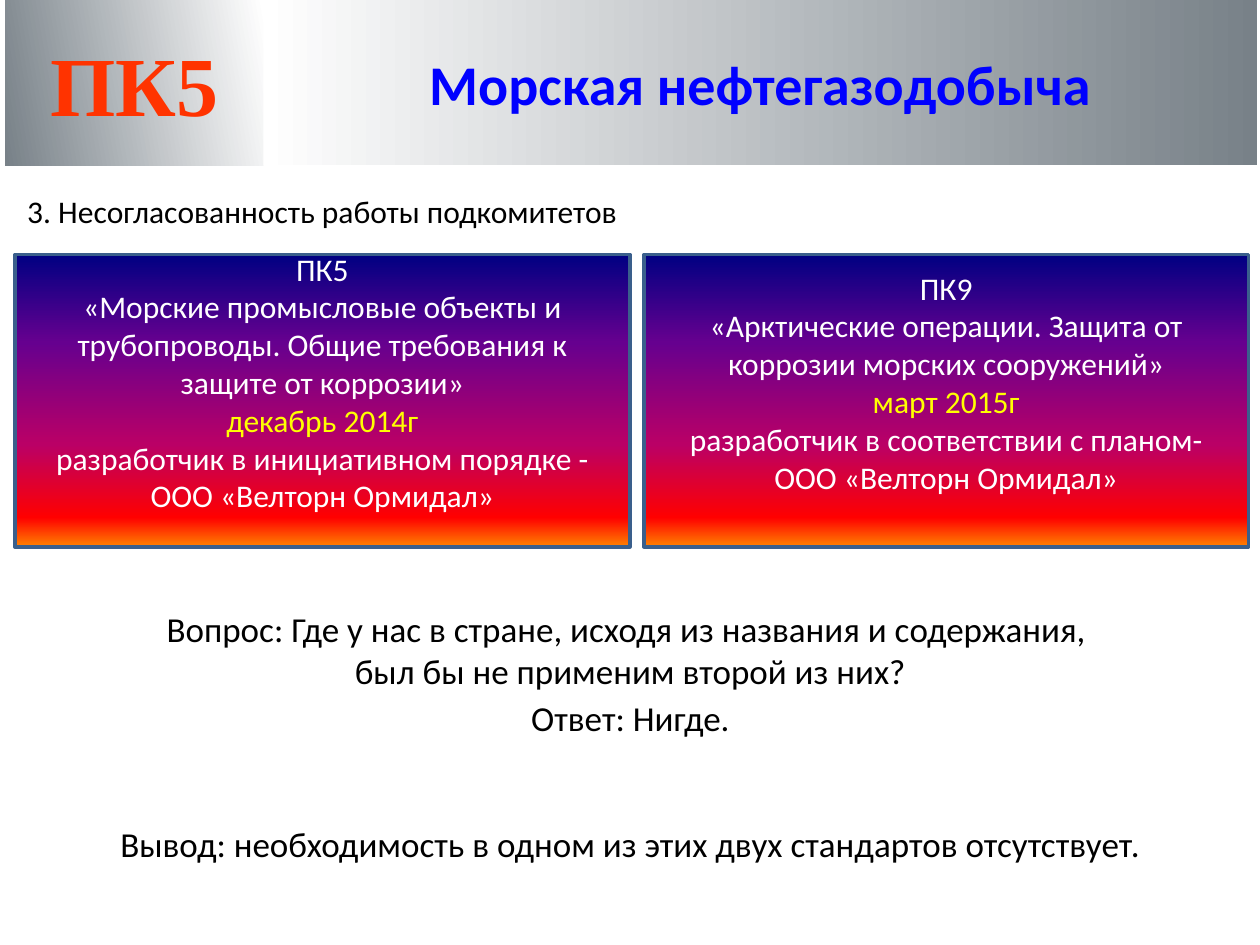
from dataclasses import dataclass

from lxml.etree import SubElement
from pptx import Presentation
from pptx.dml.color import RGBColor
from pptx.enum.shapes import MSO_SHAPE
from pptx.enum.text import MSO_ANCHOR, PP_ALIGN
from pptx.oxml.ns import qn
from pptx.util import Pt


@dataclass(frozen=True)
class Theme:
    body_font: str = "Calibri"
    badge_font: str = "Times New Roman"
    badge_size: int = 48
    title_size: int = 32
    card_size: int = 18
    remark_size: int = 20
    badge: str = "FF3300"
    title: str = "0000FF"
    ink: str = "000000"
    card_text: str = "FFFFFF"
    date: str = "FFFF00"
    card_line: str = "3A5F8C"
    steel: tuple = ((0, "FFFFFF"), (100, "788188"))
    sunset: tuple = ((0, "000082"), (30, "66008F"), (65, "BA0066"),
                     (90, "FF0000"), (100, "FF8200"))


THEME = Theme()
DEVELOPER = "ООО «Велторн Ормидал»"


def fill_gradient(shape, stops, angle):
    shape.fill.gradient()
    gradient = shape.fill._xPr.find(qn("a:gradFill"))
    for child in list(gradient):
        gradient.remove(child)
    stop_list = SubElement(gradient, qn("a:gsLst"))
    for percent, color in stops:
        stop = SubElement(stop_list, qn("a:gs"), pos=str(percent * 1000))
        SubElement(stop, qn("a:srgbClr"), val=color)
    SubElement(gradient, qn("a:lin"), ang=str(angle * 60000), scaled="0")


def write(frame, lines, size, color, font=THEME.body_font, bold=False,
          align=PP_ALIGN.CENTER):
    frame.text = "\n".join(lines)
    for paragraph in frame.paragraphs:
        paragraph.alignment = align
        for run in paragraph.runs:
            run.font.name = font
            run.font.size = Pt(size)
            run.font.bold = bold
            run.font.color.rgb = RGBColor.from_string(color)


def add_panel(shapes, preset, box, stops, angle):
    panel = shapes.add_shape(preset, *map(Pt, box))
    panel.shadow.inherit = False
    fill_gradient(panel, stops, angle)
    panel.line.fill.background()
    panel.text_frame.vertical_anchor = MSO_ANCHOR.MIDDLE
    return panel


def add_header(slide):
    header = slide.shapes.add_group_shape().shapes
    badge = add_panel(header, MSO_SHAPE.RECTANGLE, (3, 0, 147.5, 94.5),
                      THEME.steel, 170)
    write(badge.text_frame, ["ПК5"], THEME.badge_size, THEME.badge,
          THEME.badge_font, bold=True)
    badge.text_frame.paragraphs[0].space_before = Pt(8)
    banner = add_panel(header, MSO_SHAPE.RECTANGLE, (150.5, 0, 568, 94.5),
                       THEME.steel, 0)
    banner.text_frame.word_wrap = False
    write(banner.text_frame, ["Морская нефтегазодобыча"], THEME.title_size,
          THEME.title, bold=True)


def add_standard(slide, left, width, committee, name, date, origin):
    card = add_panel(slide.shapes, MSO_SHAPE.FLOWCHART_PROCESS,
                     (left, 145.5, width, 167), THEME.sunset, 90)
    card.line.color.rgb = RGBColor.from_string(THEME.card_line)
    card.line.width = Pt(2)
    frame = card.text_frame
    frame.word_wrap = True
    frame.margin_bottom = Pt(25)
    write(frame, [committee, name, date, f"{origin} {DEVELOPER}"],
          THEME.card_size, THEME.card_text)
    date_run = frame.paragraphs[2].runs[0]
    date_run.font.color.rgb = RGBColor.from_string(THEME.date)


def add_remark(slide, box, lines, size, align=PP_ALIGN.CENTER):
    frame = slide.shapes.add_textbox(*map(Pt, box)).text_frame
    frame.word_wrap = True
    write(frame, lines, size, THEME.ink, align=align)
    return frame


def main():
    deck = Presentation()
    deck.slide_width, deck.slide_height = Pt(720), Pt(540)
    slide = deck.slides.add_slide(deck.slide_layouts[6])

    add_header(slide)
    add_remark(slide, (8.5, 106, 499, 29),
               ["3. Несогласованность работы подкомитетов"],
               THEME.card_size, PP_ALIGN.JUSTIFY)
    add_standard(slide, 8.5, 351.5, "ПК5",
                 "«Морские промысловые объекты и трубопроводы. "
                 "Общие требования к защите от коррозии»",
                 "декабрь 2014г", "разработчик в инициативном порядке -")
    add_standard(slide, 368, 345.5, "ПК9",
                 "«Арктические операции. Защита от коррозии морских сооружений»",
                 "март 2015г", "разработчик в соответствии с планом-")
    add_remark(slide, (20, 343.5, 680.5, 55.5),
               ["Вопрос: Где у нас в стране, исходя из названия и содержания, ",
                "был бы не применим второй из них?"], THEME.remark_size)
    answer = add_remark(
        slide, (20, 394.5, 680.5, 104.5),
        ["Ответ: Нигде.",
         "Вывод: необходимость в одном из этих двух стандартов отсутствует."],
        THEME.remark_size)
    answer.paragraphs[1].space_before = Pt(48)

    deck.save("out.pptx")


if __name__ == "__main__":
    main()
